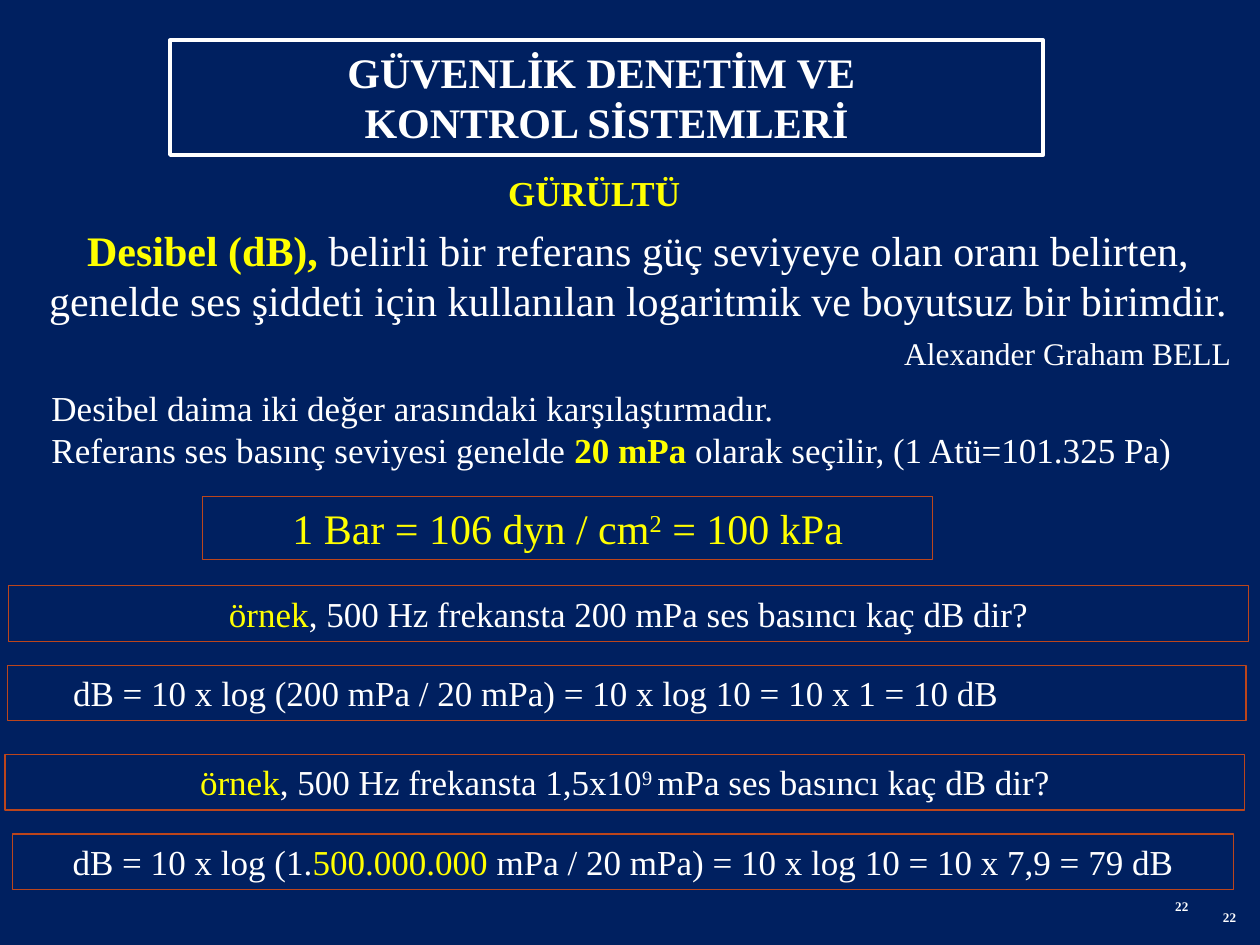
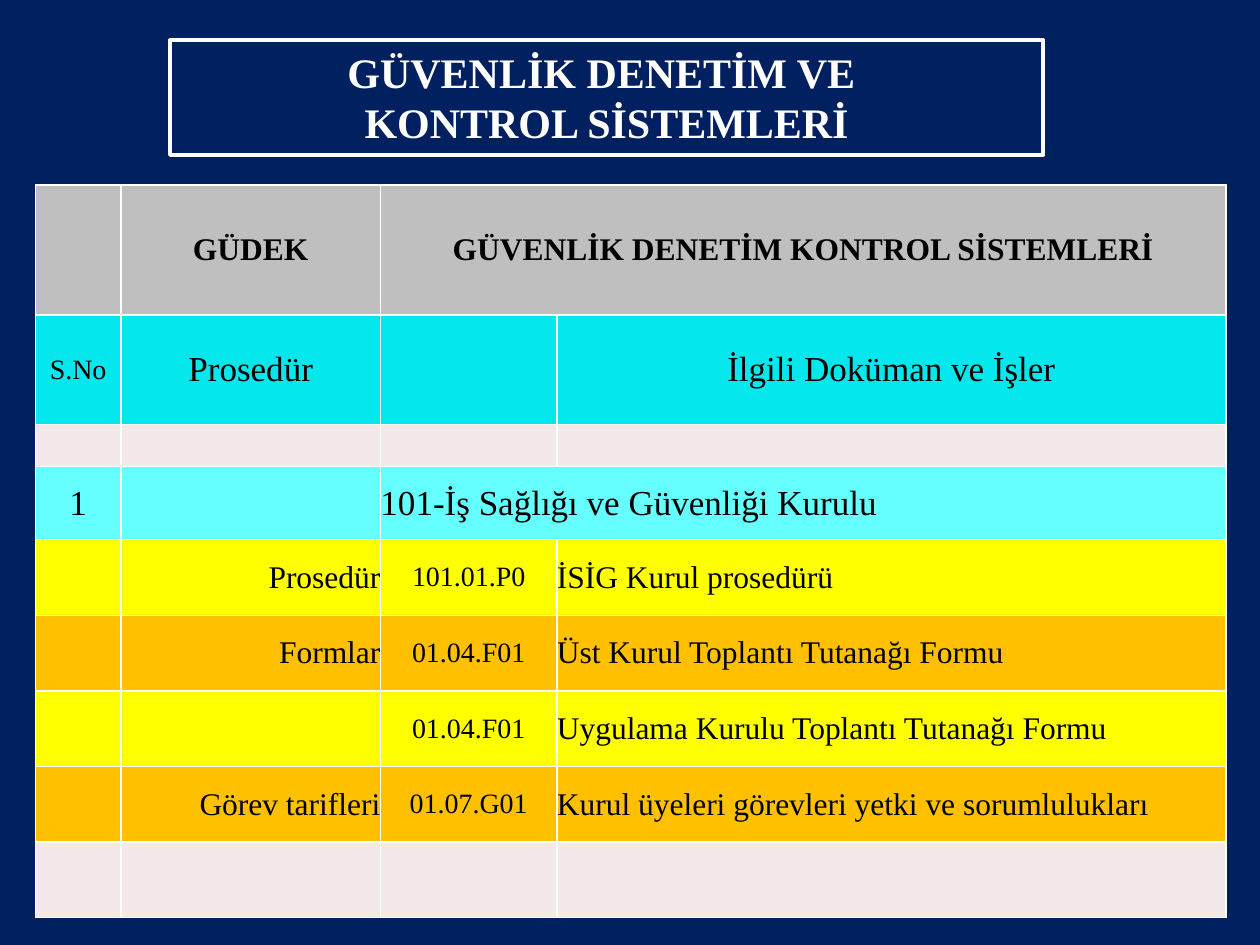
from lxml import etree
from pptx import Presentation
from pptx.dml.color import RGBColor
from pptx.enum import shapes, text
from pptx.oxml import ns
from pptx.util import Inches, Pt

NAVY = RGBColor(0x00, 0x20, 0x60)
WHITE = RGBColor(0xFF, 0xFF, 0xFF)
BLACK = RGBColor(0x00, 0x00, 0x00)
YELLOW = RGBColor(0xFF, 0xFF, 0x00)
RUST = RGBColor(0xBC, 0x45, 0x1B)
GREY = RGBColor(0xBF, 0xBF, 0xBF)
CYAN = RGBColor(0x03, 0xE7, 0xED)
AQUA = RGBColor(0x66, 0xFF, 0xFF)
AMBER = RGBColor(0xFF, 0xC0, 0x00)
BLUSH = RGBColor(0xF3, 0xE9, 0xE8)

FACE = "Times New Roman"
LEFT, CENTER, RIGHT = text.PP_ALIGN.LEFT, text.PP_ALIGN.CENTER, text.PP_ALIGN.RIGHT
TITLE = ("GÜVENLİK DENETİM VE ", "KONTROL SİSTEMLERİ")

COLUMNS = (0.68, 2.06, 1.4, 5.31)
BODY_SIZES = (20, 18, 16, 18)
BODY_ALIGNS = (CENTER, RIGHT, CENTER, LEFT)
CENTERED = (CENTER,) * 4
ROWS = (
    (1.03, GREY, (18,) * 4, CENTERED, True,
     ("", "GÜDEK", "GÜVENLİK DENETİM KONTROL SİSTEMLERİ", None)),
    (0.87, CYAN, (16, 20, 20, 20), CENTERED, False,
     ("S.No", "Prosedür", "", "İlgili Doküman ve İşler")),
    (0.32, BLUSH, BODY_SIZES, BODY_ALIGNS, False, ("", "", "", "")),
    (0.58, AQUA, (20,) * 4, (CENTER, RIGHT, LEFT, LEFT), False,
     ("1", "", "101-İş Sağlığı ve Güvenliği Kurulu", None)),
    (0.6, YELLOW, BODY_SIZES, BODY_ALIGNS, False,
     ("", "Prosedür", "101.01.P0", "İSİG Kurul prosedürü")),
    (0.6, AMBER, BODY_SIZES, BODY_ALIGNS, False,
     ("", "Formlar", "01.04.F01", "Üst Kurul Toplantı Tutanağı Formu")),
    (0.6, YELLOW, BODY_SIZES, BODY_ALIGNS, False,
     ("", "", "01.04.F01", "Uygulama Kurulu Toplantı Tutanağı Formu")),
    (0.6, AMBER, BODY_SIZES, BODY_ALIGNS, False,
     ("", "Görev tarifleri", "01.07.G01",
      "Kurul üyeleri görevleri yetki ve sorumlulukları")),
    (0.6, BLUSH, BODY_SIZES, BODY_ALIGNS, False, ("", "", "", "")),
)


class Deck:
    """Holds the shared style and the slide being built."""

    def __init__(self):
        self.show = Presentation()
        self.show.slide_width, self.show.slide_height = Inches(10), Inches(7.5)
        self.slide = None

    def add_slide(self):
        """Start a slide with the navy ground and the framed title."""
        self.slide = self.show.slides.add_slide(self.show.slide_layouts[6])
        fill = self.slide.background.fill
        fill.solid()
        fill.fore_color.rgb = NAVY
        title = self.frame(1.35, 0.32, 6.93, 0.91, WHITE, 2.25)
        for line in TITLE:
            self.say(title, [(line, WHITE, {"bold": True})], 24, CENTER)

    def say(self, frame, runs, size, align=LEFT, before=0):
        """Fill the first free paragraph with (text, colour, format) runs."""
        paragraph = frame.paragraphs[0]
        if paragraph.runs:
            paragraph = frame.add_paragraph()
        paragraph.alignment = align
        if before:
            paragraph.space_before = Pt(before)
        paragraph.font.size = Pt(size)
        for words, color, extra in runs:
            run = paragraph.add_run()
            run.text = words
            style = {"name": FACE, "size": Pt(size), "bold": False} | extra
            raised = style.pop("raised", False)
            for key, value in style.items():
                setattr(run.font, key, value)
            run.font.color.rgb = color
            if raised:
                run._r.get_or_add_rPr().set("baseline", "30000")

    def label(self, x, y, width, height):
        """Add an unframed text area and return its text frame."""
        box = self.slide.shapes.add_textbox(*map(Inches, (x, y, width, height)))
        box.text_frame.word_wrap = True
        return box.text_frame

    def frame(self, x, y, width, height, color=RUST, weight=0.75):
        """Add an outlined rectangle and return its text frame."""
        box = self.slide.shapes.add_shape(
            shapes.MSO_SHAPE.RECTANGLE, *map(Inches, (x, y, width, height)))
        box.shadow.inherit = False
        box.fill.background()
        box.line.color.rgb = color
        box.line.width = Pt(weight)
        box.text_frame.word_wrap = True
        box.text_frame.vertical_anchor = text.MSO_ANCHOR.TOP
        return box.text_frame

    def border(self, cell):
        """Draw thin white lines round a cell."""
        properties = cell._tc.get_or_add_tcPr()
        for side in ("a:lnL", "a:lnR", "a:lnT", "a:lnB"):
            line = etree.SubElement(properties, ns.qn(side), w=str(Pt(1)))
            solid = etree.SubElement(line, ns.qn("a:solidFill"))
            etree.SubElement(solid, ns.qn("a:srgbClr"), val=str(WHITE))

    def table(self, x, y, columns, rows):
        """Add a table; None in a row extends the cell on its left."""
        heights = [row[0] for row in rows]
        size = (x, y, sum(columns), sum(heights))
        grid = self.slide.shapes.add_table(
            len(rows), len(columns), *map(Inches, size)).table
        grid.first_row = grid.horz_banding = False
        for column, width in zip(grid.columns, columns):
            column.width = Inches(width)
        for r, (height, color, sizes, aligns, bold, words) in enumerate(rows):
            grid.rows[r].height = Inches(height)
            for c, entry in enumerate(words):
                cell = grid.cell(r, c)
                self.border(cell)
                cell.fill.solid()
                cell.fill.fore_color.rgb = color
                cell.vertical_anchor = text.MSO_ANCHOR.MIDDLE
                for side in ("left", "right", "top", "bottom"):
                    setattr(cell, f"margin_{side}", 0)
                runs = [(entry, BLACK, {"bold": bold})] if entry else []
                self.say(cell.text_frame, runs, sizes[c], aligns[c])
                if entry is None:
                    grid.cell(r, c - 1).merge(cell)


def decibel_slide(deck):
    """Build the slide on noise and decibels."""
    strong, raised = {"bold": True}, {"raised": True}
    deck.add_slide()
    deck.say(deck.label(2.04, 1.31, 5.35, 0.44), [("GÜRÜLTÜ", YELLOW, strong)], 20, CENTER)

    definition = deck.label(0.26, 1.73, 9.61, 1.31)
    deck.say(definition, [
        ("Desibel (dB), ", YELLOW, strong),
        ("belirli bir referans güç seviyeye olan oranı belirten, genelde ses "
         "şiddeti için kullanılan logaritmik ve boyutsuz bir birimdir.", WHITE, {}),
    ], 24, CENTER)
    deck.say(definition, [("Alexander Graham BELL", WHITE, {})], 18, RIGHT, 5)

    reference = deck.label(0.31, 3.02, 9.61, 0.77)
    deck.say(reference, [
        ("Desibel daima iki değer arasındaki karşılaştırmadır.", WHITE, {})], 20)
    deck.say(reference, [
        ("Referans ses basınç seviyesi genelde ", WHITE, {}),
        ("20 mPa ", YELLOW, strong),
        ("olarak seçilir, (1 Atü=101.325 Pa)", WHITE, {}),
    ], 20)

    deck.say(deck.frame(1.61, 3.94, 5.79, 0.5), [
        ("1 Bar = 106 dyn / cm", YELLOW, {}),
        ("2", YELLOW, raised),
        (" = 100 kPa", YELLOW, {}),
    ], 24, CENTER)

    deck.say(deck.frame(0.07, 4.65, 9.84, 0.44), [
        ("örnek", YELLOW, {}),
        (", 500 Hz frekansta 200 mPa ses basıncı kaç dB dir?", WHITE, {}),
    ], 20, CENTER)
    first_answer = deck.frame(0.06, 5.28, 9.83, 0.44)
    first_answer.margin_left = Inches(0.52)
    deck.say(first_answer, [
        ("dB = 10 x log (200 mPa / 20 mPa) = 10 x log 10 = 10 x 1 = 10 dB", WHITE, {})], 20)

    deck.say(deck.frame(0.04, 5.99, 9.84, 0.44), [
        ("örnek", YELLOW, {}),
        (", 500 Hz frekansta 1,5x10", WHITE, {}),
        ("9 ", WHITE, raised),
        ("mPa ses basıncı kaç dB dir?", WHITE, {}),
    ], 20, CENTER)
    deck.say(deck.frame(0.1, 6.62, 9.69, 0.44), [
        ("dB = 10 x log (1.", WHITE, {}),
        ("500.000.000 ", YELLOW, {}),
        ("mPa / 20 mPa) = 10 x log 10 = 10 x 7,9 = 79 dB", WHITE, {}),
    ], 20, CENTER)

    for x, y, width in ((8.94, 7.05, 0.59), (8.65, 7.14, 1.26)):
        number = deck.label(x, y, width, 0.28)
        number.vertical_anchor = text.MSO_ANCHOR.MIDDLE
        deck.say(number, [("22", WHITE, strong)], 7.5, RIGHT)


def procedure_slide(deck):
    """Build the slide with the table of procedures and documents."""
    deck.add_slide()
    deck.table(0.28, 1.47, COLUMNS, ROWS)


def main():
    """Build both slides and save them."""
    deck = Deck()
    decibel_slide(deck)
    procedure_slide(deck)
    deck.show.save("out.pptx")


if __name__ == "__main__":
    main()
